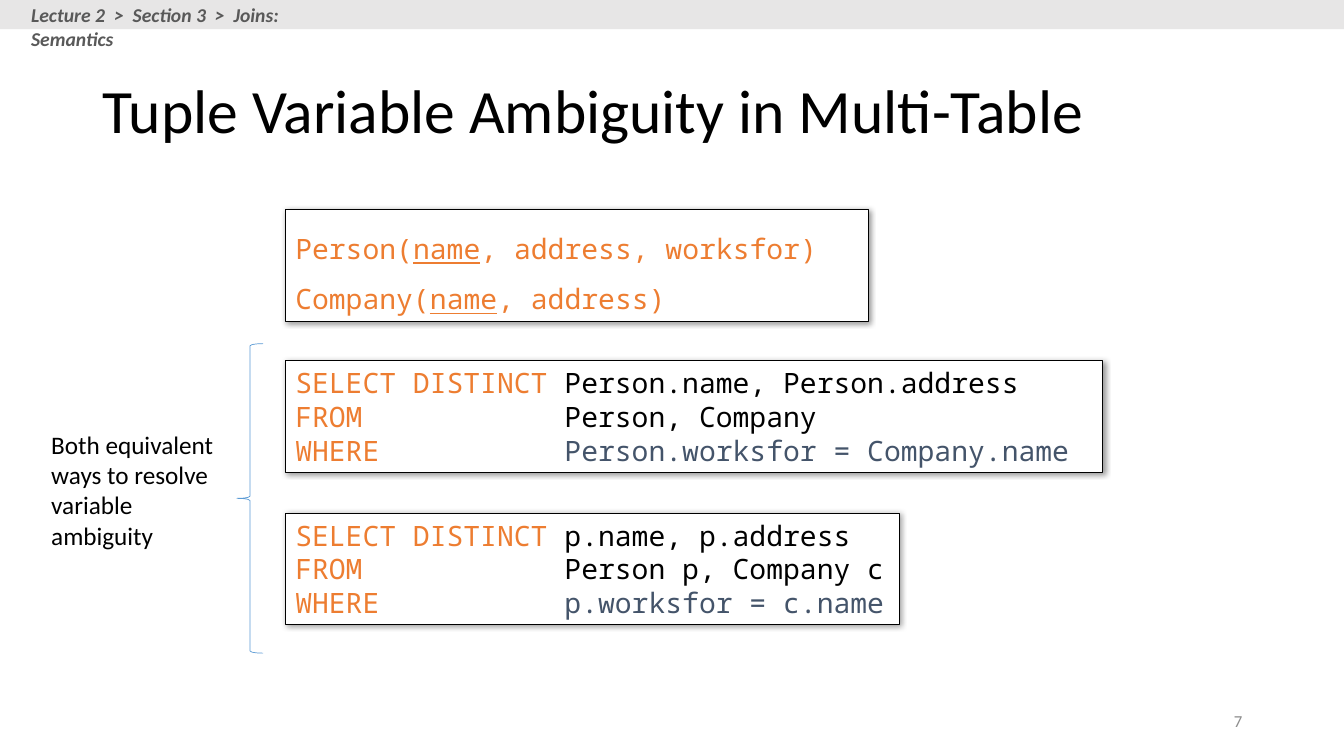
import pptx
import pptx.dml.color
import pptx.enum.shapes
import pptx.enum.text
import pptx.oxml
import pptx.oxml.ns
import pptx.util

Inches = pptx.util.Inches
Color = pptx.dml.color.RGBColor
Align = pptx.enum.text.PP_ALIGN
Anchor = pptx.enum.text.MSO_ANCHOR
Preset = pptx.enum.shapes.MSO_SHAPE

BLACK = Color(0x00, 0x00, 0x00)
WHITE = Color(0xFF, 0xFF, 0xFF)
BAND_GRAY = Color(0xE7, 0xE6, 0xE6)
HEADER_GRAY = Color(0x59, 0x59, 0x59)
NUMBER_GRAY = Color(0x8C, 0x8C, 0x8C)
ORANGE = Color(0xED, 0x7D, 0x31)
SLATE = Color(0x44, 0x54, 0x6A)
BLUE = Color(0x5B, 0x9B, 0xD5)

TEXT_FONT = "Calibri"
CODE_FONT = "Noto Sans Mono"
CODE_SIZE = 20
CODE_LEFT = 2.83
CODE_HEIGHT = 1.11
VALUE_COLUMN = 2.67  # distance from the code text's left edge

SHADOW = (
    '<a:effectLst %s><a:outerShdw blurRad="50800" dist="12700" dir="2700000" '
    'algn="tl" rotWithShape="0"><a:srgbClr val="000000"><a:alpha val="40000"/>'
    '</a:srgbClr></a:outerShdw></a:effectLst>' % pptx.oxml.ns.nsdecls("a"))
TAB_STOP = ('<a:tabLst %s><a:tab pos="%d" algn="l"/></a:tabLst>'
            % (pptx.oxml.ns.nsdecls("a"), Inches(VALUE_COLUMN)))


def add_run(paragraph, text, font, size, color, **style):
    run = paragraph.add_run()
    run.text = text
    run.font.name = font
    run.font.size = pptx.util.Pt(size)
    run.font.color.rgb = color
    for name, value in style.items():
        setattr(run.font, name, value)


def add_label(slide, box, text, size, color, anchor=Anchor.TOP,
              align=Align.LEFT, spacing=1.0, **style):
    shape = slide.shapes.add_textbox(*map(Inches, box))
    frame = shape.text_frame
    frame.word_wrap = True
    frame.vertical_anchor = anchor
    paragraph = frame.paragraphs[0]
    paragraph.alignment = align
    paragraph.line_spacing = spacing
    add_run(paragraph, text, TEXT_FONT, size, color, **style)


def add_header(slide, box):
    left, top, width, height = box
    band = slide.shapes.add_shape(Preset.RECTANGLE, *map(Inches, box))
    band.shadow.inherit = False
    band.fill.solid()
    band.fill.fore_color.rgb = BAND_GRAY
    band.line.fill.background()
    add_label(slide, (left + 0.21, top - 0.02, 3.45, 0.34),
              "Lecture 2  >  Section 3  >  Joins: Semantics",
              14, HEADER_GRAY, bold=True, italic=True)


def add_code_box(slide, box):
    """Draw the shadowed frame and return its empty paragraph."""
    shape = slide.shapes.add_shape(Preset.RECTANGLE, *map(Inches, box))
    shape.fill.solid()
    shape.fill.fore_color.rgb = WHITE
    shape.line.color.rgb = BLACK
    shape.line.width = pptx.util.Pt(0.75)
    shape._element.spPr.append(pptx.oxml.parse_xml(SHADOW))
    shape.text_frame.word_wrap = True
    shape.text_frame.vertical_anchor = Anchor.TOP
    paragraph = shape.text_frame.paragraphs[0]
    paragraph.alignment = Align.LEFT
    return paragraph


def add_schema(slide, box, tables):
    paragraph = add_code_box(slide, box)
    paragraph.line_spacing = 1.5
    for index, (table, key, columns) in enumerate(tables):
        if index:
            paragraph.add_line_break()
        add_run(paragraph, table + "(", CODE_FONT, CODE_SIZE, ORANGE)
        add_run(paragraph, key, CODE_FONT, CODE_SIZE, ORANGE, underline=True)
        add_run(paragraph, ", " + columns + ")", CODE_FONT, CODE_SIZE, ORANGE)


def add_query(slide, box, values):
    paragraph = add_code_box(slide, box)
    paragraph._p.get_or_add_pPr().append(pptx.oxml.parse_xml(TAB_STOP))
    keywords = ("SELECT DISTINCT", "FROM", "WHERE")
    colors = (BLACK, BLACK, SLATE)
    for index, (keyword, value, color) in enumerate(zip(keywords, values, colors)):
        if index:
            paragraph.add_line_break()
        add_run(paragraph, keyword, CODE_FONT, CODE_SIZE, ORANGE)
        add_run(paragraph, "\t" + value, CODE_FONT, CODE_SIZE, color)


def add_side_note(slide, box):
    left, top, width, height = box
    brace_width = 0.26
    note_width = width - brace_width
    brace = slide.shapes.add_shape(
        Preset.LEFT_BRACE, Inches(left + note_width), Inches(top),
        Inches(brace_width), Inches(height))
    brace.shadow.inherit = False
    brace.fill.background()
    brace.line.color.rgb = BLUE
    brace.line.width = pptx.util.Pt(0.5)
    add_label(slide, (left, top + 0.8, note_width, 1.31),
              "Both equivalent ways to resolve variable ambiguity", 18, BLACK)


def build_slide(presentation):
    slide = presentation.slides.add_slide(presentation.slide_layouts[6])

    # Header, title and slide number
    add_header(slide, (0, 0, 13.33, 0.29))
    add_label(slide, (0.92, 0.4, 11.5, 1.45),
              "Tuple Variable Ambiguity in Multi-Table", 44, BLACK,
              anchor=Anchor.MIDDLE, spacing=0.9)
    add_label(slide, (9.42, 6.95, 3, 0.4), "7", 12, NUMBER_GRAY,
              anchor=Anchor.MIDDLE, align=Align.RIGHT)

    # Table schemas
    add_schema(slide, (CODE_LEFT, 2.08, 5.78, CODE_HEIGHT), (
        ("Person", "name", "address, worksfor"),
        ("Company", "name", "address")))

    # Equivalent queries
    add_query(slide, (CODE_LEFT, 3.58, 8.11, CODE_HEIGHT), (
        "Person.name, Person.address", "Person, Company",
        "Person.worksfor = Company.name"))
    add_query(slide, (CODE_LEFT, 5.09, 6.09, CODE_HEIGHT), (
        "p.name, p.address", "Person p, Company c", "p.worksfor = c.name"))
    add_side_note(slide, (0.41, 3.41, 2.2, 3.07))


def main():
    presentation = pptx.Presentation()
    presentation.slide_width = Inches(13.33)
    presentation.slide_height = Inches(7.5)
    build_slide(presentation)
    presentation.save("out.pptx")


if __name__ == "__main__":
    main()
